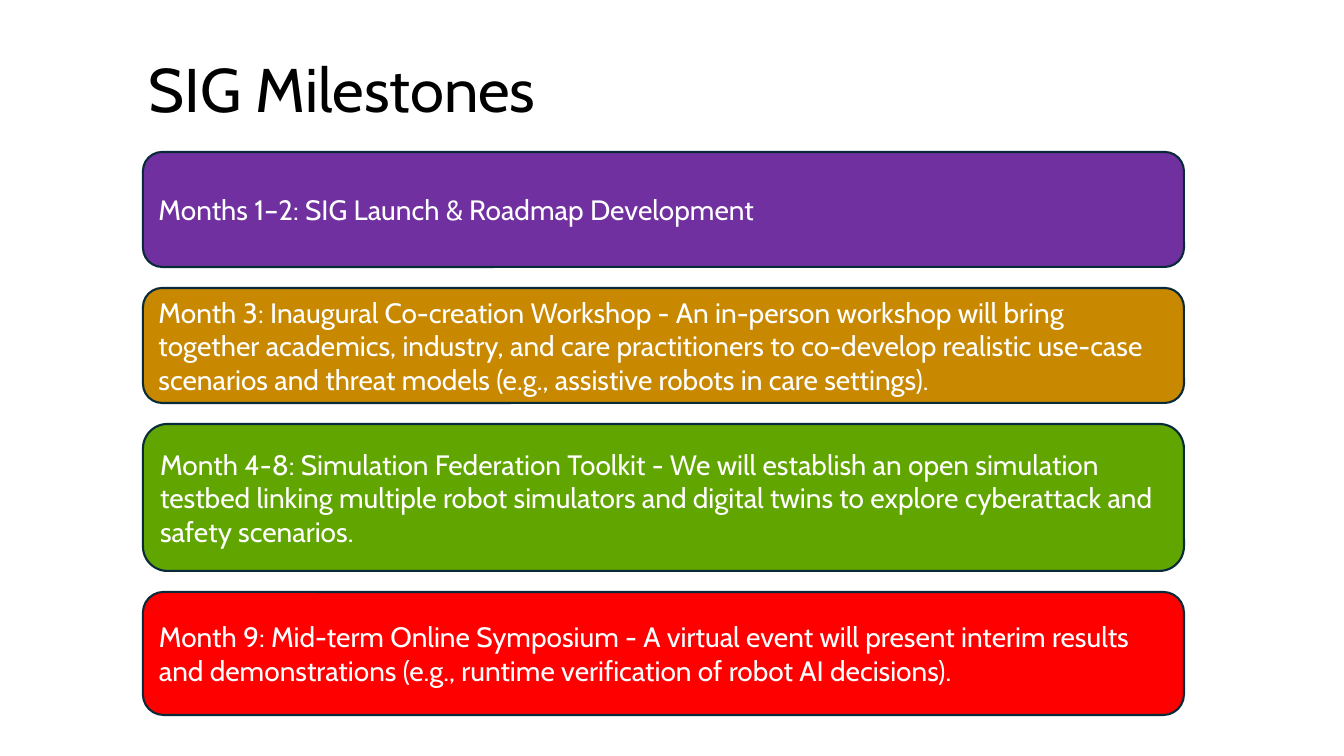
"""Build the SIG Milestones slide: a title above four stacked milestone boxes."""
from pptx import Presentation
from pptx.dml.color import RGBColor
from pptx.enum.shapes import MSO_SHAPE
from pptx.enum.text import MSO_ANCHOR, PP_ALIGN
from pptx.util import Pt

ROUNDED = MSO_SHAPE.ROUNDED_RECTANGLE
MIDDLE = MSO_ANCHOR.MIDDLE
LEFT = PP_ALIGN.LEFT

BLACK = RGBColor(0x00, 0x00, 0x00)
WHITE = RGBColor(0xFF, 0xFF, 0xFF)
NAVY = RGBColor(0x09, 0x2A, 0x39)
PURPLE = RGBColor(0x70, 0x30, 0xA0)
OCHRE = RGBColor(0xC8, 0x88, 0x00)
GREEN = RGBColor(0x60, 0xA5, 0x00)
RED = RGBColor(0xFF, 0x00, 0x00)

FONT = "Cabin"
BOX_LEFT, BOX_TOP, BOX_WIDTH, BOX_GAP = 143, 152, 1041, 21

MILESTONES = [
    (115, PURPLE, "Months 1–2: SIG Launch & Roadmap Development"),
    (115, OCHRE,
     "Month 3: Inaugural Co-creation Workshop - An in-person workshop will "
     "bring together academics, industry, and care practitioners to co-develop "
     "realistic use-case scenarios and threat models (e.g., assistive robots "
     "in care settings)."),
    (147, GREEN,
     "Month 4-8: Simulation Federation Toolkit - We will establish an open "
     "simulation testbed linking multiple robot simulators and digital twins "
     "to explore cyberattack and safety scenarios."),
    (123, RED,
     "Month 9: Mid-term Online Symposium - A virtual event will present "
     "interim results and demonstrations (e.g., runtime verification of robot "
     "AI decisions)."),
]


def px(n):
    return round(n * 914400 / 100.8)


def write(sp, text, size, color):
    tf = sp.text_frame
    tf.word_wrap = True
    tf.vertical_anchor = MIDDLE
    p = tf.paragraphs[0]
    p.text = text
    p.alignment = LEFT
    p.font.name = FONT
    p.font.size = Pt(size)
    p.font.color.rgb = color
    return p


prs = Presentation()
prs.slide_width, prs.slide_height = px(1344), px(756)
s = prs.slides.add_slide(prs.slide_layouts[6])

title = s.shapes.add_textbox(px(139), px(20), px(1159), px(146))
write(title, "SIG Milestones", 44, BLACK).line_spacing = 0.9

top = BOX_TOP
for height, color, text in MILESTONES:
    sp = s.shapes.add_shape(ROUNDED, px(BOX_LEFT), px(top), px(BOX_WIDTH), px(height))
    sp.shadow.inherit = False
    sp.fill.solid()
    sp.fill.fore_color.rgb = color
    sp.line.color.rgb = NAVY
    sp.line.width = Pt(1.5)
    write(sp, text, 20, WHITE)
    top += height + BOX_GAP

prs.save("out.pptx")
